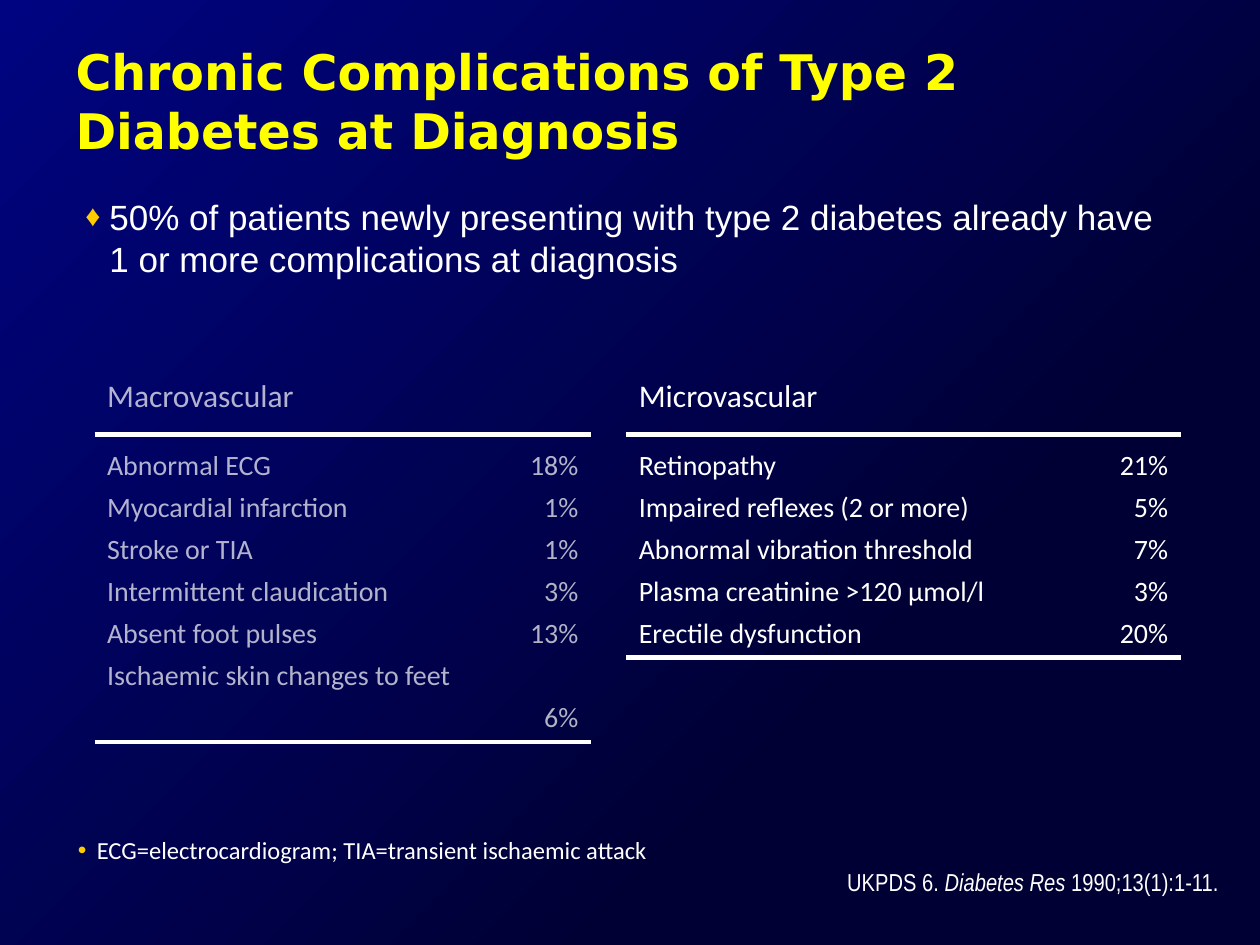
from dataclasses import dataclass

from lxml.etree import SubElement
from pptx import Presentation
from pptx.dml.color import RGBColor
from pptx.enum.text import MSO_ANCHOR, MSO_AUTO_SIZE, PP_ALIGN
from pptx.oxml import parse_xml
from pptx.oxml.ns import qn
from pptx.util import Inches, Pt

A_NS = 'xmlns:a="http://schemas.openxmlformats.org/drawingml/2006/main"'
PLAIN_TABLE_STYLE = "{2D5ABB26-0587-4C30-8999-92F81FD0307C}"


@dataclass(frozen=True)
class Theme:
    dark: str = "000035"
    bright: str = "000480"
    text: str = "FFFFFF"
    title: str = "FFFF00"
    bullet: str = "FFCC00"
    title_font: str = "DejaVu Sans"
    body_font: str = "Arial"
    table_font: str = "Calibri"
    citation_font: str = "Arial Narrow"
    title_size: int = 28
    body_size: int = 20
    heading_size: int = 18
    row_size: int = 16
    note_size: int = 14
    row_pitch: int = 24
    rule_width: int = 3
    muted_alpha: int = 70


THEME = Theme()

MACROVASCULAR = [
    ("Abnormal ECG", "18%"),
    ("Myocardial infarction", "1%"),
    ("Stroke or TIA", "1%"),
    ("Intermittent claudication", "3%"),
    ("Absent foot pulses", "13%"),
    ("Ischaemic skin changes to feet", "6%"),
]
MICROVASCULAR = [
    ("Retinopathy", "21%"),
    ("Impaired reflexes (2 or more)", "5%"),
    ("Abnormal vibration threshold", "7%"),
    ("Plasma creatinine >120 µmol/l", "3%"),
    ("Erectile dysfunction", "20%"),
]


def write(paragraph, text, *, font, size, color=THEME.text, bold=False, italic=False,
          alpha=100, align=PP_ALIGN.LEFT, pitch=None, before=0):
    """Append text to a paragraph; a vertical tab in it starts a new line."""
    paragraph.alignment = align
    paragraph.space_before = Pt(before)
    if pitch:
        paragraph.line_spacing = Pt(pitch)
    for number, line in enumerate(text.split("\v")):
        if number:
            paragraph.add_line_break()
        run = paragraph.add_run()
        run.text = line
        run.font.name, run.font.size = font, Pt(size)
        run.font.bold, run.font.italic = bold, italic
        run.font.color.rgb = RGBColor.from_string(color)
        if alpha < 100:
            tint = run.font.fill._xPr.find(f".//{qn('a:srgbClr')}")
            SubElement(tint, qn("a:alpha"), val=str(alpha * 1000))


def add_bullet(paragraph, mark, indent, percent=100):
    properties = paragraph._p.get_or_add_pPr()
    properties.set("marL", str(indent))
    properties.set("indent", str(-indent))
    color = SubElement(properties, qn("a:buClr"))
    SubElement(color, qn("a:srgbClr"), val=THEME.bullet)
    SubElement(properties, qn("a:buSzPct"), val=str(percent * 1000))
    SubElement(properties, qn("a:buFont"), typeface=THEME.body_font)
    SubElement(properties, qn("a:buChar"), char=mark)


def add_text_area(slide, box):
    frame = slide.shapes.add_textbox(*map(Inches, box)).text_frame
    frame.word_wrap = True
    return frame.paragraphs[0]


def paint_background(slide):
    fill = slide.background.fill
    fill.gradient()
    for stop, color, position in zip(fill.gradient_stops, (THEME.dark, THEME.bright), (0.3, 1)):
        stop.color.rgb = RGBColor.from_string(color)
        stop.position = position
    gradient = slide.element.find(f".//{qn('a:gradFill')}")
    # Radiate from the bottom right corner
    gradient.replace(gradient.find(qn("a:lin")), parse_xml(
        f'<a:path {A_NS} path="circle"><a:fillToRect l="100000" t="100000"/></a:path>'))


def place_title(slide, box, text):
    title = slide.shapes.title
    title.left, title.top, title.width, title.height = map(Inches, box)
    frame = title.text_frame
    frame.auto_size = MSO_AUTO_SIZE.NONE
    frame.vertical_anchor = MSO_ANCHOR.MIDDLE
    write(frame.paragraphs[0], text, font=THEME.title_font, size=THEME.title_size,
          color=THEME.title, bold=True)


def add_key_point(slide, box, text):
    paragraph = add_text_area(slide, box)
    add_bullet(paragraph, "♦", Inches(0.19), 85)
    write(paragraph, text, font=THEME.body_font, size=THEME.body_size)


def rule_below(cell):
    cell.fill.background()
    cell._tc.get_or_add_tcPr().insert(0, parse_xml(
        f'<a:lnB {A_NS} w="{Pt(THEME.rule_width)}"><a:solidFill>'
        f'<a:srgbClr val="{THEME.text}"/></a:solidFill></a:lnB>'))


def add_complications(slide, box, heading, complications, value_width, alpha=100):
    left, top, width, height = box
    heading_height = 0.6
    table = slide.shapes.add_table(2, 2, *map(Inches, box)).table
    table._tbl.tblPr.find(qn("a:tableStyleId")).text = PLAIN_TABLE_STYLE
    table.first_row = table.horz_banding = False
    table.columns[0].width = Inches(width - value_width)
    table.columns[1].width = Inches(value_width)
    table.rows[0].height = Inches(heading_height)
    table.rows[1].height = Inches(height - heading_height)
    for cell in table.iter_cells():
        rule_below(cell)

    # Heading across both columns
    heading_cell = table.cell(0, 0)
    heading_cell.merge(table.cell(0, 1))
    heading_cell.vertical_anchor = MSO_ANCHOR.MIDDLE
    write(heading_cell.text_frame.paragraphs[0], heading, font=THEME.table_font,
          size=THEME.heading_size, alpha=alpha)

    # Names on the left, shares on the right
    for column, align in enumerate((PP_ALIGN.LEFT, PP_ALIGN.RIGHT)):
        frame = table.cell(1, column).text_frame
        for number, complication in enumerate(complications):
            paragraph = frame.add_paragraph() if number else frame.paragraphs[0]
            # The sixth share sits one line below its name
            before = THEME.row_pitch if column == 1 and number == 5 else 0
            write(paragraph, complication[column], font=THEME.table_font, size=THEME.row_size,
                  alpha=alpha, align=align, pitch=THEME.row_pitch, before=before)


def add_abbreviations(slide, box, text):
    paragraph = add_text_area(slide, box)
    add_bullet(paragraph, "•", Inches(0.15))
    write(paragraph, text, font=THEME.table_font, size=THEME.note_size)


def add_citation(slide, box, parts):
    paragraph = add_text_area(slide, box)
    for text, italic in parts:
        write(paragraph, text, font=THEME.citation_font, size=THEME.note_size,
              italic=italic, align=PP_ALIGN.RIGHT)


def main():
    presentation = Presentation()
    presentation.slide_width, presentation.slide_height = Inches(10), Inches(7.5)
    slide = presentation.slides.add_slide(presentation.slide_layouts[5])

    paint_background(slide)
    place_title(slide, (0.5, 0.17, 8.08, 1.25),
                "Chronic Complications of Type 2 Diabetes at Diagnosis")
    add_key_point(slide, (0.58, 1.5, 8.92, 4.99),
                  "50% of patients newly presenting with type 2 diabetes already have "
                  "\v1 or more complications at diagnosis")
    add_abbreviations(slide, (0.52, 6.58, 7.36, 0.25),
                      "ECG=electrocardiogram; TIA=transient ischaemic attack")
    add_complications(slide, (0.75, 2.85, 3.94, 3.04), "Macrovascular", MACROVASCULAR,
                      value_width=0.9, alpha=THEME.muted_alpha)
    add_complications(slide, (4.97, 2.85, 4.4, 2.37), "Microvascular", MICROVASCULAR,
                      value_width=1)
    add_citation(slide, (4.69, 6.83, 5.08, 0.64),
                 [("UKPDS 6. ", False), ("Diabetes Res", True), (" 1990;13(1):1-11.", False)])
    presentation.save("out.pptx")


if __name__ == "__main__":
    main()
